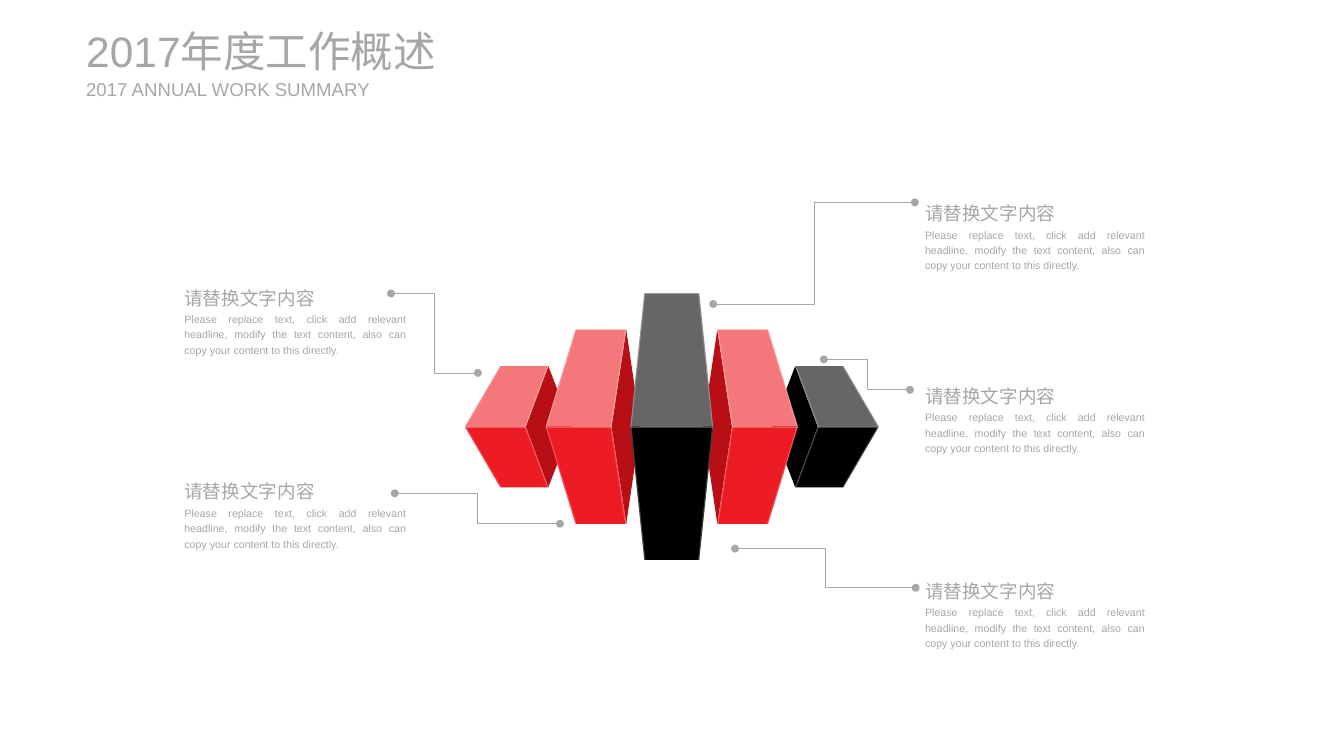
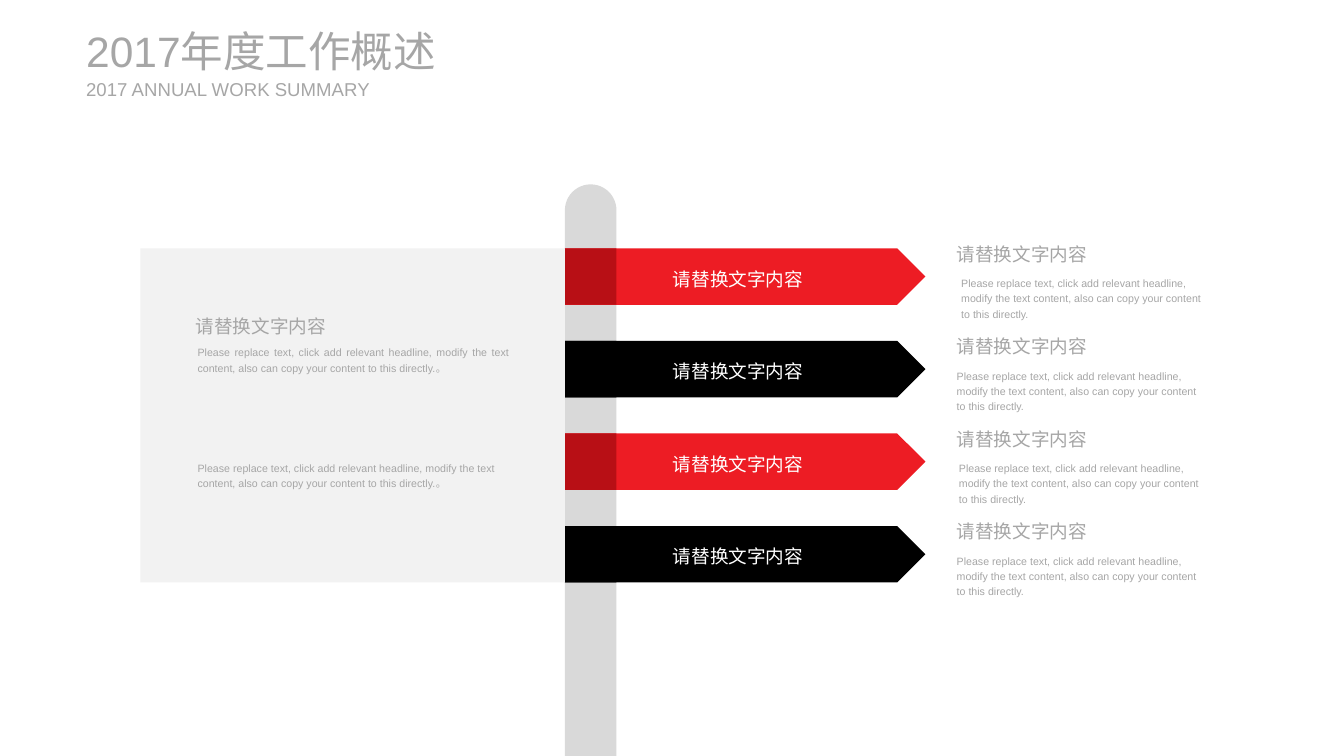
from pptx import Presentation
from pptx import util as u
from pptx.dml.color import RGBColor
from pptx.enum import shapes, text
from pptx.oxml.ns import qn
from lxml import etree

COLOURS = {
    "grey": "A6A6A6", "white": "FFFFFF", "black": "000000", "charcoal": "666666",
    "red": "ED1C24", "dark_red": "B80F15", "pink": "F4777C",
    "pole": "D9D9D9", "panel": "F2F2F2",
}
FONT = "Arial"
HEADING = "请替换文字内容"
BODY = ("Please replace text, click add relevant headline, modify the text content, "
        "also can copy your content to this directly.")
HEADING_SIZE, BODY_SIZE = 14, 8
JUSTIFY, LEFT, CENTER = text.PP_ALIGN.JUSTIFY, text.PP_ALIGN.LEFT, text.PP_ALIGN.CENTER


# Shared helpers
def colour(name):
    return RGBColor.from_string(COLOURS[name])


def paint(shape, fill, opacity=None):
    shape.shadow.inherit = False
    shape.fill.solid()
    shape.fill.fore_color.rgb = colour(fill)
    shape.line.fill.background()
    if opacity is not None:
        rgb = shape.fill._xPr.find(".//" + qn("a:srgbClr"))
        etree.SubElement(rgb, qn("a:alpha"), val=str(opacity * 1000))


def write(shape, words, size, name="grey", align=LEFT, spacing=1.2):
    para = shape.text_frame.paragraphs[0]
    para.text = words
    para.alignment = align
    para.line_spacing = spacing
    for span in para.runs:
        span.font.name = FONT
        span.font.size = u.Pt(size)
        span.font.color.rgb = colour(name)


def add_text(slide, left, top, width, height, words, size, align=LEFT, spacing=1.2):
    box = slide.shapes.add_textbox(u.Cm(left), u.Cm(top), u.Cm(width), u.Cm(height))
    box.text_frame.word_wrap = True
    box.text_frame.auto_size = text.MSO_AUTO_SIZE.SHAPE_TO_FIT_TEXT
    write(box, words, size, align=align, spacing=spacing)
    return box


def add_block(slide, kind, left, top, width, height, fill):
    block = slide.shapes.add_shape(kind, u.Cm(left), u.Cm(top), u.Cm(width), u.Cm(height))
    paint(block, fill)
    return block


def add_polygon(slide, points, fill, opacity=None):
    corners = [(u.Cm(x), u.Cm(y)) for x, y in points]
    builder = slide.shapes.build_freeform(*corners[0])
    builder.add_line_segments(corners[1:], close=True)
    paint(builder.convert_to_shape(), fill, opacity)


def add_title(slide):
    for top, width, height, words, size in (
            (0.66, 10.97, 1.37, "2017年度工作概述", 32),
            (2.06, 7.8, 0.61, "2017 ANNUAL WORK SUMMARY", 14)):
        frame = add_text(slide, 2.29, top, width, height, words, size, spacing=1).text_frame
        frame.margin_left = frame.margin_right = frame.margin_top = frame.margin_bottom = 0
        frame.vertical_anchor = text.MSO_ANCHOR.MIDDLE


def add_note(slide, left, top, width, body_left=0, body_top=0.76, align=LEFT, body=BODY):
    """A heading with a small paragraph below it."""
    add_text(slide, left, top, 4.2, 0.91, HEADING, HEADING_SIZE, align)
    add_text(slide, left + body_left, top + body_top, width, 1.45, body, BODY_SIZE, align)


# Slide 1: row of prisms with callouts
def add_prism(slide, centre, horizon, edges, rim, half, lit, front, side=None):
    """edges are x offsets on the horizon, rim those on the far edges."""
    bevel = 0.03
    cx, cy = centre
    outer, inner = (cx + x for x in edges)
    rim_outer, rim_inner = (cx + x for x in rim)
    # Side face, then upper and lower face
    if side:
        add_polygon(slide, [(inner, cy), (rim_inner, cy - half), (cx + horizon, cy),
                            (rim_inner, cy + half)], side)
    for y, fill in ((cy - half, lit), (cy + half, front)):
        add_polygon(slide, [(inner, cy), (rim_inner, y), (rim_outer, y), (outer, cy)], fill)
    # Light bevels on the horizon and both slanting edges
    add_polygon(slide, [(inner, cy), (outer, cy), (outer, cy + bevel), (inner, cy + bevel)],
                "white", 25)
    inward = bevel if outer < inner else -bevel
    for x, rim_x, shift in ((outer, rim_outer, inward), (inner, rim_inner, -inward)):
        edge = [(x, cy), (rim_x, cy - half)]
        back = [(rim_x + shift, cy - half), (x + shift, cy), (rim_x + shift, cy + half)]
        add_polygon(slide, edge + back + [(rim_x, cy + half)], "white", 25)


def add_prism_row(slide, centre):
    reds = ("pink", "red", "dark_red")
    blacks = ("charcoal", "black", "black")
    for sign, outer_fills in ((-1, reds), (1, blacks)):
        for side_end, edges, rim, half, fills in (
                (2.66, (5.5, 3.88), (4.56, 3.28), 1.61, outer_fills),
                (0.83, (3.35, 1.6), (2.56, 1.21), 2.58, reds)):
            add_prism(slide, centre, sign * side_end, [sign * x for x in edges],
                      [sign * x for x in rim], half, *fills)
    add_prism(slide, centre, 0, (-1.1, 1.1), (-0.73, 0.73), 3.54, "charcoal", "black")


def add_leader(slide, start, end):
    leader = slide.shapes.add_connector(
        shapes.MSO_CONNECTOR.ELBOW, *(u.Cm(value) for value in (*start, *end)))
    leader.line.color.rgb = colour("grey")
    leader.line.width = u.Pt(0.5)
    line = leader.line._get_or_add_ln()
    for tag in ("a:headEnd", "a:tailEnd"):
        etree.SubElement(line, qn(tag), type="oval")
    etree.SubElement(leader._element.spPr, qn("a:effectLst"))


def build_prism_slide(slide):
    add_prism_row(slide, (17.85, 11.34))
    for left, width, tops in ((4.65, 6.4, (7.37, 12.52)),
                              (24.33, 6.35, (5.13, 9.98, 15.16))):
        for top in tops:
            add_note(slide, left, top, width, align=JUSTIFY)
    for start, end in (((10.39, 7.8), (12.7, 9.91)),
                       ((10.49, 13.11), (14.88, 13.92)),
                       ((18.95, 8.08), (24.31, 5.38)),
                       ((21.89, 9.55), (24.18, 10.36)),
                       ((19.53, 14.58), (24.33, 15.62))):
        add_leader(slide, start, end)
    add_title(slide)


# Slide 2: signpost with four arrows
PITCH, ARROW_HEIGHT, POLE_WIDTH = 2.46, 1.5, 1.37


def add_arrow(slide, left, top, fill, fold):
    arrow = add_block(slide, shapes.MSO_SHAPE.PENTAGON, left, top, 9.58, ARROW_HEIGHT, fill)
    arrow.text_frame.vertical_anchor = text.MSO_ANCHOR.MIDDLE
    write(arrow, HEADING, HEADING_SIZE, "white", CENTER)
    add_block(slide, shapes.MSO_SHAPE.RECTANGLE, left, top, POLE_WIDTH, ARROW_HEIGHT, fold)


def add_panel(slide, left, top, width, height):
    add_block(slide, shapes.MSO_SHAPE.RECTANGLE, left, top, width, height, "panel")
    body = BODY + "。"
    add_text(slide, left + 1.22, top + 1.52, 4.27, 0.91, HEADING, HEADING_SIZE)
    for offset, align in ((2.41, JUSTIFY), (5.49, LEFT)):
        add_text(slide, left + 1.27, top + offset, 8.79, 1.04, body, BODY_SIZE, align)


def build_signpost_slide(slide):
    left, top = 15.01, 6.6
    pole = add_block(slide, shapes.MSO_SHAPE.ROUND_2_SAME_RECTANGLE,
                     left, 4.9, POLE_WIDTH, 15.19, "pole")
    pole.adjustments[0], pole.adjustments[1] = 0.5, 0
    body_lefts = (0.12, 0, 0.06, 0)
    for row, body_left in enumerate(body_lefts):
        fills = ("black", "black") if row % 2 else ("red", "dark_red")
        add_arrow(slide, left, top + row * PITCH, *fills)
        add_note(slide, 25.17, top - 0.4 + row * PITCH, 6.93, body_left, 0.97)
    add_panel(slide, 3.73, top, left - 3.73, 3 * PITCH + ARROW_HEIGHT)
    add_title(slide)


def main():
    deck = Presentation()
    deck.slide_width, deck.slide_height = u.Cm(35.71), u.Cm(20.09)
    for build in (build_prism_slide, build_signpost_slide):
        build(deck.slides.add_slide(deck.slide_layouts[6]))
    deck.save("out.pptx")


if __name__ == "__main__":
    main()
